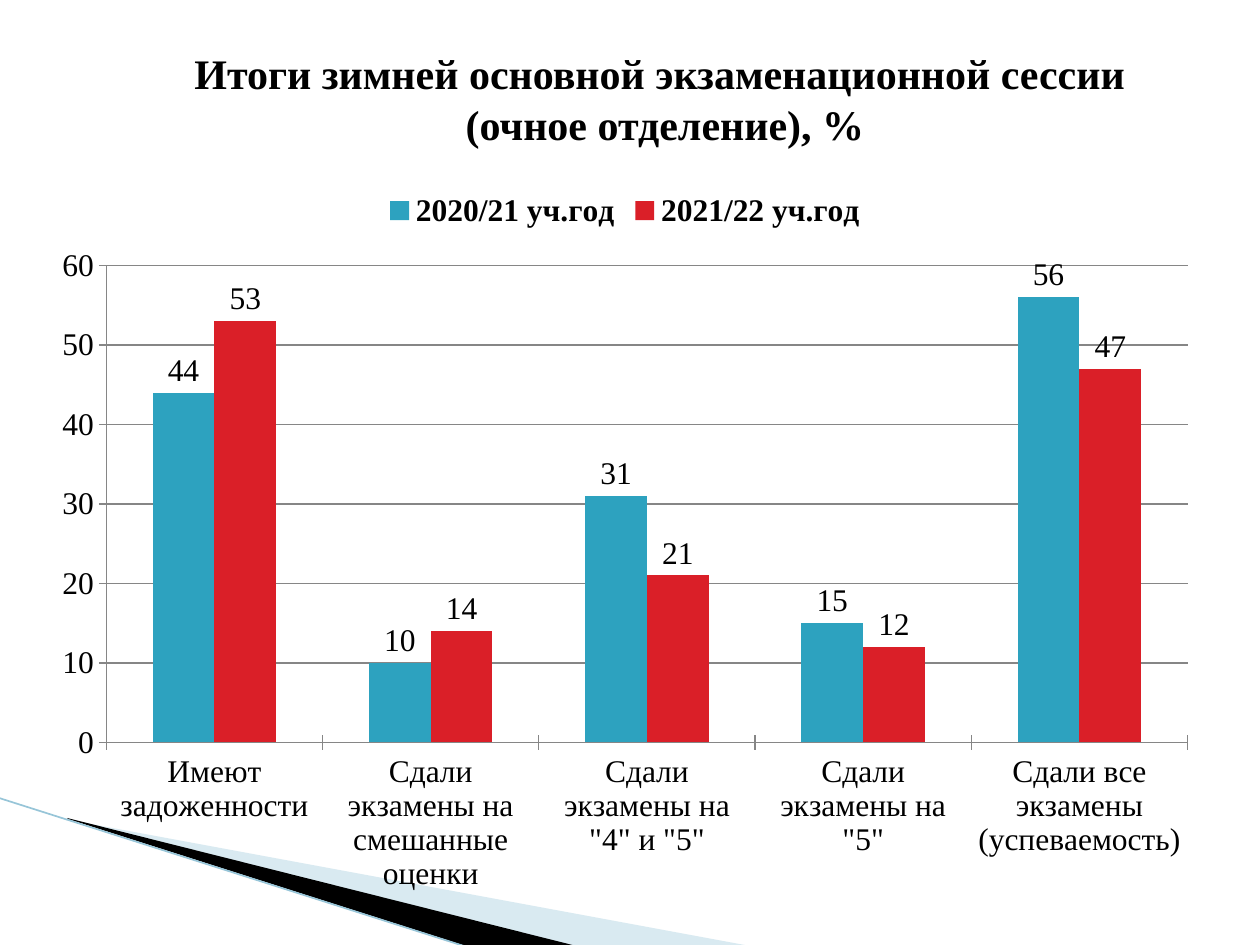
from lxml.etree import SubElement
from pptx import Presentation
from pptx.chart.data import CategoryChartData
from pptx.dml.color import RGBColor
from pptx.enum.chart import XL_CHART_TYPE, XL_LABEL_POSITION, XL_LEGEND_POSITION, XL_TICK_MARK
from pptx.enum.shapes import MSO_CONNECTOR
from pptx.enum.text import MSO_ANCHOR, PP_ALIGN
from pptx.oxml.ns import qn
from pptx.util import Pt

EMU_PER_PX = 914400 / 126


def px(length):
    return round(length * EMU_PER_PX)


def color(hex_value):
    return RGBColor.from_string(hex_value)


class SlideBuilder:
    font_name = "Times New Roman"
    text_color = "000000"
    axis_color = "868686"

    def __init__(self, slide):
        self.slide = slide

    def style_font(self, font, size, bold=False):
        font.name = self.font_name
        font.size = Pt(size)
        font.bold = bold
        font.color.rgb = color(self.text_color)

    def wedge(self, points, fill, opacity=100):
        start, *rest = points
        builder = self.slide.shapes.build_freeform(*start, scale=EMU_PER_PX)
        builder.add_line_segments(rest, close=True)
        shape = builder.convert_to_shape()
        shape.shadow.inherit = False
        shape.fill.solid()
        shape.fill.fore_color.rgb = color(fill)
        shape.line.fill.background()
        if opacity < 100:
            fill_color = shape.fill._xPr.find(qn("a:solidFill"))[0]
            SubElement(fill_color, qn("a:alpha"), val=str(opacity * 1000))

    def line(self, start, end, stroke, width):
        connector = self.slide.shapes.add_connector(
            MSO_CONNECTOR.STRAIGHT, *map(px, start + end))
        connector.line.color.rgb = color(stroke)
        connector.line.width = Pt(width)
        SubElement(connector._element.spPr, qn("a:effectLst"))

    def title(self, box, lines, size):
        frame = self.slide.shapes.add_textbox(*map(px, box)).text_frame
        frame.word_wrap = True
        frame.vertical_anchor = MSO_ANCHOR.MIDDLE
        paragraph = frame.paragraphs[0]
        paragraph.alignment = PP_ALIGN.CENTER
        for index, text in enumerate(lines):
            if index:
                paragraph.add_line_break()
            run = paragraph.add_run()
            run.text = text
            self.style_font(run.font, size, bold=True)

    def column_chart(self, box, categories, series, size):
        data = CategoryChartData()
        data.categories = categories
        for name, values, _ in series:
            data.add_series(name, values)
        chart = self.slide.shapes.add_chart(
            XL_CHART_TYPE.COLUMN_CLUSTERED, *map(px, box), data).chart
        self.style_font(chart.font, size)
        chart.has_title = False
        chart.has_legend = True
        chart.legend.position = XL_LEGEND_POSITION.TOP
        chart.legend.include_in_layout = False
        self.style_font(chart.legend.font, size, bold=True)

        for axis in (chart.category_axis, chart.value_axis):
            axis.major_tick_mark = XL_TICK_MARK.CROSS
            axis.format.line.color.rgb = color(self.axis_color)
        chart.value_axis.minimum_scale = 0
        chart.value_axis.maximum_scale = 60
        chart.value_axis.major_unit = 10
        chart.value_axis.has_major_gridlines = True
        chart.value_axis.major_gridlines.format.line.color.rgb = color(self.axis_color)

        plot = chart.plots[0]
        plot.vary_by_categories = False
        plot.gap_width = 150
        plot.overlap = 0
        for columns, (_, _, fill) in zip(plot.series, series):
            columns.format.fill.solid()
            columns.format.fill.fore_color.rgb = color(fill)
            columns.data_labels.show_value = True
            columns.data_labels.position = XL_LABEL_POSITION.OUTSIDE_END
            self.style_font(columns.data_labels.font, size)


def main():
    presentation = Presentation()
    presentation.slide_width = px(1260)
    presentation.slide_height = px(945)
    slide = presentation.slides.add_slide(presentation.slide_layouts[6])
    builder = SlideBuilder(slide)

    builder.wedge([(69, 820), (750, 946), (575, 946), (69, 819)], "A0CBDC", opacity=40)
    builder.wedge([(67, 818), (576, 946), (469, 947), (68, 819)], "000000")
    builder.line((-1, 798), (467, 947), "97C5D8", 0.95)

    builder.title(
        (98, 39, 1134, 118),
        ["Итоги зимней основной экзаменационной сессии ", "(очное отделение), %"],
        24,
    )
    builder.column_chart(
        (39, 178, 1172, 728),
        [
            "Имеют задоженности",
            "Сдали экзамены на смешанные оценки",
            'Сдали экзамены на "4" и "5"',
            'Сдали экзамены на "5"',
            "Сдали все экзамены (успеваемость)",
        ],
        [
            ("2020/21 уч.год", (44, 10, 31, 15, 56), "2DA2BF"),
            ("2021/22 уч.год", (53, 14, 21, 12, 47), "DA1F28"),
        ],
        18,
    )
    presentation.save("out.pptx")


if __name__ == "__main__":
    main()
